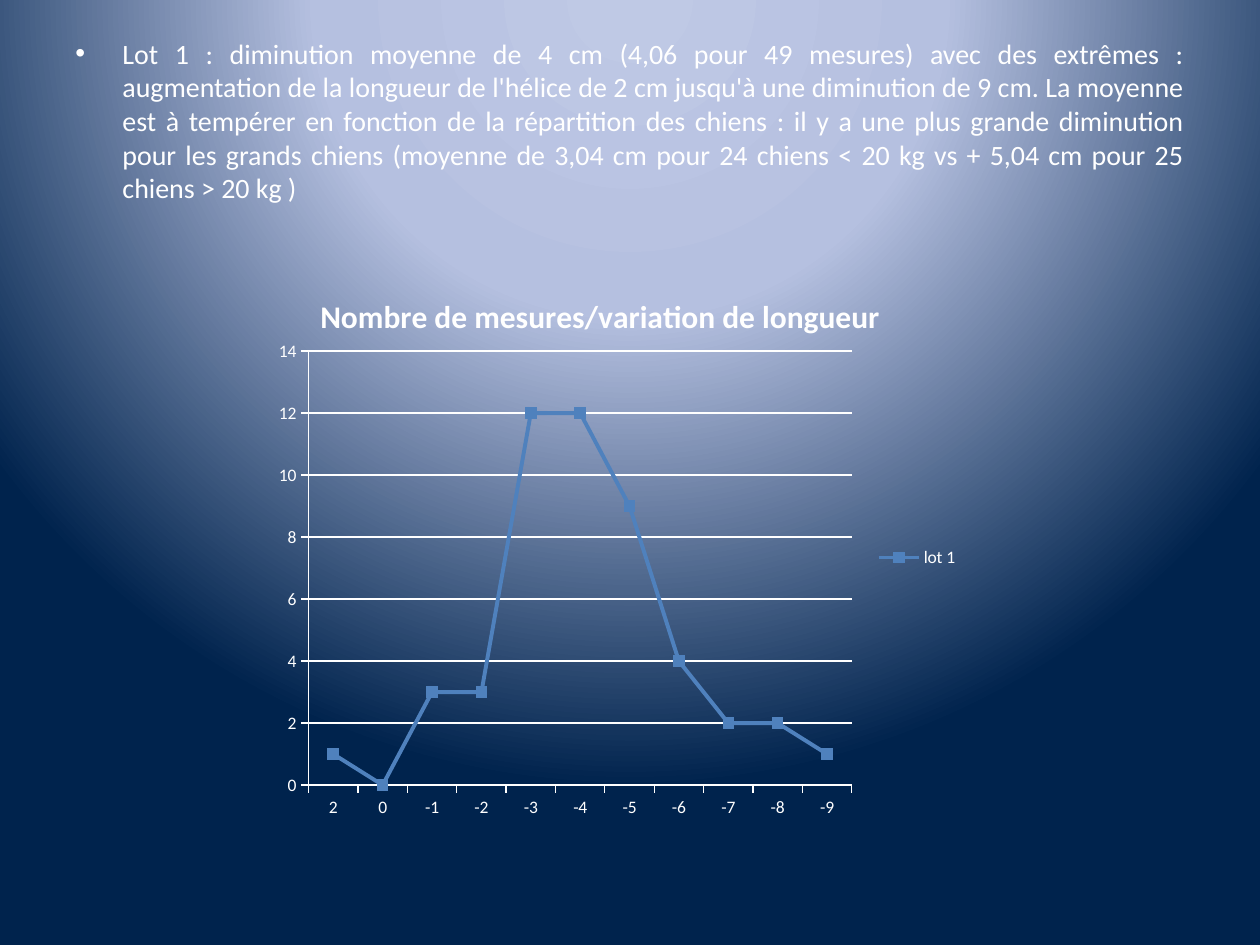
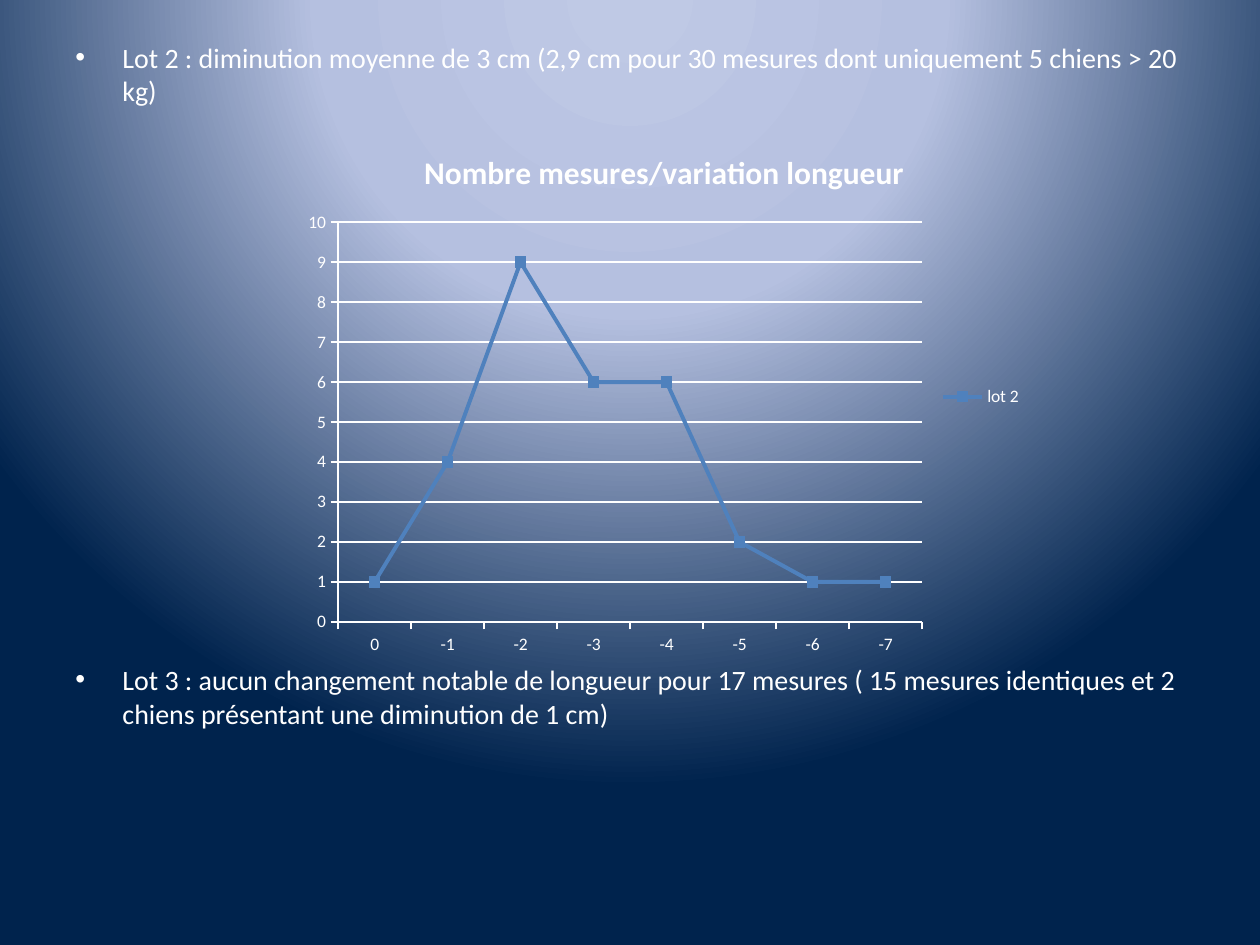
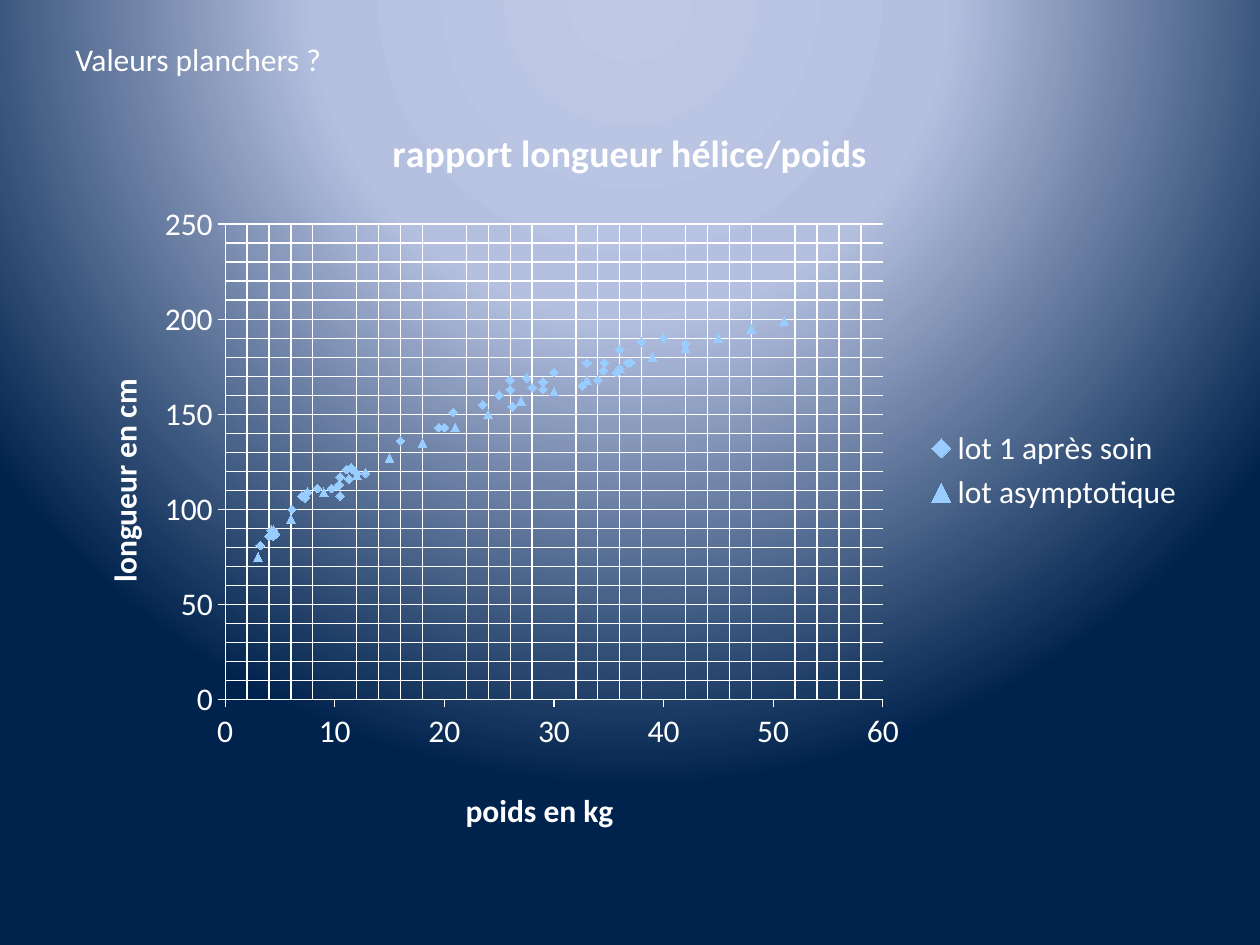
from dataclasses import dataclass

from pptx import Presentation
from pptx.chart.data import CategoryChartData, XyChartData
from pptx.dml.color import RGBColor
from pptx.enum.chart import XL_CHART_TYPE as CT, XL_LEGEND_POSITION as LP
from pptx.enum.chart import XL_MARKER_STYLE as MS, XL_TICK_MARK as TM
from pptx.enum.text import MSO_ANCHOR as ANCHOR, PP_ALIGN as ALIGN
from pptx.oxml import parse_xml
from pptx.oxml.ns import nsdecls, qn
from pptx.util import Cm, Pt


@dataclass(frozen=True)
class Theme:
    font: str = "Calibri"
    text: RGBColor = RGBColor(0xFF, 0xFF, 0xFF)
    line: RGBColor = RGBColor(0x4F, 0x81, 0xBD)
    dots: RGBColor = RGBColor(0x99, 0xCC, 0xFF)
    backdrop: tuple = ((0, "BFC9E5"), (40, "B5C0E0"), (100, "00234D"))
    body: float = 16
    heading: float = 18
    small: float = 10
    large_title: float = 21.6
    rule: float = 0.75
    curve: float = 2.25


T = Theme()

LOT_1 = ("Lot 1 : diminution moyenne de 4 cm (4,06 pour 49 mesures) avec des extrêmes : "
         "augmentation de la longueur de l'hélice de 2 cm jusqu'à une diminution de 9 cm. "
         "La moyenne est à tempérer en fonction de la répartition des chiens : il y a une "
         "plus grande diminution pour les grands chiens (moyenne de 3,04 cm pour 24 chiens "
         "< 20 kg vs + 5,04 cm pour 25 chiens > 20 kg )")
LOT_2 = ("Lot 2 : diminution moyenne de 3 cm (2,9 cm pour 30 mesures dont uniquement "
         "5 chiens > 20 kg)")
LOT_3 = ("Lot 3 : aucun changement notable de longueur pour 17 mesures ( 15 mesures "
         "identiques et 2 chiens présentant une diminution de 1 cm)")

AFTER_CARE = [
    (3.2, 81), (4, 86), (4.2, 89), (4.4, 89), (4.4, 86), (4.6, 87), (6.1, 100),
    (7, 107), (7.3, 106), (7.5, 109), (8.4, 111), (9.7, 111), (10.3, 112),
    (10.5, 117), (10.4, 113), (10.5, 107), (11.1, 121), (11.3, 116), (11.5, 122),
    (11.6, 121), (12, 119), (12.8, 119), (16, 136), (19.5, 143), (20, 143),
    (20.8, 151), (23.5, 155), (25, 160), (26, 168), (26, 163), (26.2, 154),
    (27.5, 169), (28, 164), (29, 167), (29, 163), (30, 172), (32.6, 165),
    (33, 177), (34, 168), (34.5, 173), (34.6, 177), (35.7, 172), (36, 184),
    (36, 174), (36.7, 177), (37, 177), (38, 188), (40, 190), (42, 187),
]
ASYMPTOTE = list(zip(range(3, 52, 3), [75, 95, 109, 118, 127, 135, 143, 150, 157,
                                       162, 168, 174, 180, 185, 190, 195, 199]))


def set_backdrop(prs):
    stops = "".join(f'<a:gs pos="{pos * 1000}"><a:srgbClr val="{color}"/></a:gs>'
                    for pos, color in T.backdrop)
    bg = parse_xml(
        f'<p:bg {nsdecls("p", "a")}><p:bgPr><a:gradFill rotWithShape="1">'
        f'<a:gsLst>{stops}</a:gsLst><a:path path="circle">'
        '<a:fillToRect l="50000" t="-80000" r="50000" b="180000"/></a:path>'
        '</a:gradFill><a:effectLst/></p:bgPr></p:bg>')
    c_sld = prs.slide_master.element.cSld
    for old in c_sld.findall(qn("p:bg")):
        c_sld.remove(old)
    c_sld.insert(0, bg)


def style_font(font, size, bold=False):
    font.name = T.font
    font.size = Pt(size)
    font.bold = bold
    font.color.rgb = T.text


def add_text(slide, box, text, size, align=ALIGN.LEFT, anchor=ANCHOR.TOP):
    tf = slide.shapes.add_textbox(*map(Cm, box)).text_frame
    tf.word_wrap = True
    tf.vertical_anchor = anchor
    p = tf.paragraphs[0]
    p.text = text
    p.alignment = align
    style_font(p.runs[0].font, size)
    return p


def add_bullet(slide, box, text, align=ALIGN.LEFT):
    p = add_text(slide, box, text, T.body, align)
    p.space_before = Pt(3)
    p_pr = p._p.get_or_add_pPr()
    p_pr.set("marL", str(Cm(0.95)))
    p_pr.set("indent", str(-Cm(0.95)))
    p_pr.append(parse_xml(f'<a:buFont {nsdecls("a")} typeface="Arial"/>'))
    p_pr.append(parse_xml(f'<a:buChar {nsdecls("a")} char="•"/>'))


def set_layout(parent, index, **values):
    for old in parent.findall(qn("c:layout")):
        parent.remove(old)
    target = '<c:layoutTarget val="inner"/>' if "w" in values else ""
    modes = "".join(f'<c:{k}Mode val="edge"/>' for k in values if k in "xy")
    sizes = "".join(f'<c:{k} val="{v}"/>' for k, v in values.items())
    parent.insert(index, parse_xml(
        f'<c:layout {nsdecls("c")}><c:manualLayout>{target}{modes}{sizes}'
        '</c:manualLayout></c:layout>'))


def set_title(title, text, size):
    tf = title.text_frame
    tf.text = text
    style_font(tf.paragraphs[0].runs[0].font, size, bold=True)


def style_line(line, color, width):
    line.color.rgb = color
    line.width = Pt(width)


def add_minor_grid(axis, unit):
    axis.has_minor_gridlines = True
    axis._element.find(qn("c:minorGridlines")).append(parse_xml(
        f'<c:spPr {nsdecls("c", "a")}><a:ln w="{Pt(T.rule)}"><a:solidFill>'
        f'<a:srgbClr val="{T.text}"/></a:solidFill></a:ln></c:spPr>'))
    axis.minor_unit = unit


def style_marker(series, style, size, color):
    series.marker.style = style
    series.marker.size = size
    fmt = series.marker.format
    fmt.fill.solid()
    fmt.fill.fore_color.rgb = color
    fmt.line.fill.background()


def add_chart(slide, box, kind, data, title, title_size, size, plot):
    chart = slide.shapes.add_chart(kind, *map(Cm, box), data).chart
    style_font(chart.font, size)
    set_title(chart.chart_title, title, title_size)
    chart.has_legend = True
    chart.legend.position = LP.RIGHT
    chart.legend.include_in_layout = False
    x_axis, y_axis = chart.category_axis, chart.value_axis
    x_axis.has_major_gridlines = False
    y_axis.has_major_gridlines = True
    style_line(y_axis.major_gridlines.format.line, T.text, T.rule)
    for axis in (x_axis, y_axis):
        axis.major_tick_mark = TM.OUTSIDE
        axis.minor_tick_mark = TM.NONE
        style_line(axis.format.line, T.text, T.rule)
    set_layout(chart._chartSpace.chart.plotArea, 0, **dict(zip("xywh", plot)))
    return chart


def add_line_chart(slide, box, title, name, cats, values, top, plot):
    data = CategoryChartData()
    data.categories = [str(c) for c in cats]
    data.add_series(name, values)
    chart = add_chart(slide, box, CT.LINE_MARKERS, data, title, T.heading, T.small, plot)
    chart.value_axis.minimum_scale = 0
    chart.value_axis.maximum_scale = top
    series = chart.plots[0].series[0]
    series.smooth = False
    style_line(series.format.line, T.line, T.curve)
    style_marker(series, MS.SQUARE, 6, T.line)


def add_scatter_chart(slide, box, title, groups, axes, plot):
    data = XyChartData()
    for name, points in groups:
        series = data.add_series(name)
        for x, y in points:
            series.add_data_point(x, y)
    chart = add_chart(slide, box, CT.XY_SCATTER, data, title, T.large_title, T.heading, plot)
    for axis, (label, top, step, x, y) in zip((chart.category_axis, chart.value_axis), axes):
        set_title(axis.axis_title, label, T.heading)
        set_layout(axis.axis_title._element, 1, x=x, y=y)
        axis.minimum_scale = 0
        axis.maximum_scale = top
        axis.major_unit = step
        add_minor_grid(axis, step / 5)
    for series, style in zip(chart.plots[0].series, (MS.DIAMOND, MS.TRIANGLE)):
        series.format.line.fill.background()
        style_marker(series, style, 5, T.dots)


def lot_1_slide(slide):
    add_bullet(slide, (1.27, 0.61, 22.86, 4.5), LOT_1, ALIGN.JUSTIFY)
    add_line_chart(slide, (4.62, 5.46, 14.96, 11.56),
                   "Nombre de mesures/variation de longueur", "lot 1",
                   [2, *range(0, -10, -1)], [1, 0, 3, 3, 12, 12, 9, 4, 2, 2, 1],
                   14, (0.107, 0.14, 0.732, 0.757))


def lots_2_3_slide(slide):
    add_bullet(slide, (1.27, 0.69, 22.86, 1.8), LOT_2)
    add_line_chart(slide, (5.92, 2.57, 14.94, 10.85),
                   "Nombre mesures/variation longueur", "lot 2",
                   range(0, -8, -1), [1, 4, 9, 6, 6, 2, 1, 1],
                   10, (0.06, 0.176, 0.788, 0.743))
    add_bullet(slide, (1.27, 13.23, 22.86, 1.8), LOT_3)


def floor_values_slide(slide):
    add_text(slide, (1.27, 0.76, 22.86, 0.86), "Valeurs planchers ?", T.heading,
             anchor=ANCHOR.MIDDLE)
    add_scatter_chart(slide, (1.27, 1.98, 22.86, 15.01), "rapport longueur hélice/poids",
                      [("lot 1 après soin", AFTER_CARE), ("lot asymptotique", ASYMPTOTE)],
                      [("poids en kg", 60, 10, 0.35, 0.92),
                       ("longueur en cm", 250, 50, 0.03, 0.37)],
                      (0.143, 0.169, 0.58, 0.639))


def main():
    prs = Presentation()
    prs.slide_width, prs.slide_height = Cm(25.4), Cm(19.05)
    set_backdrop(prs)
    for build in (lot_1_slide, lots_2_3_slide, floor_values_slide):
        build(prs.slides.add_slide(prs.slide_layouts[6]))
    prs.save("out.pptx")


if __name__ == "__main__":
    main()
